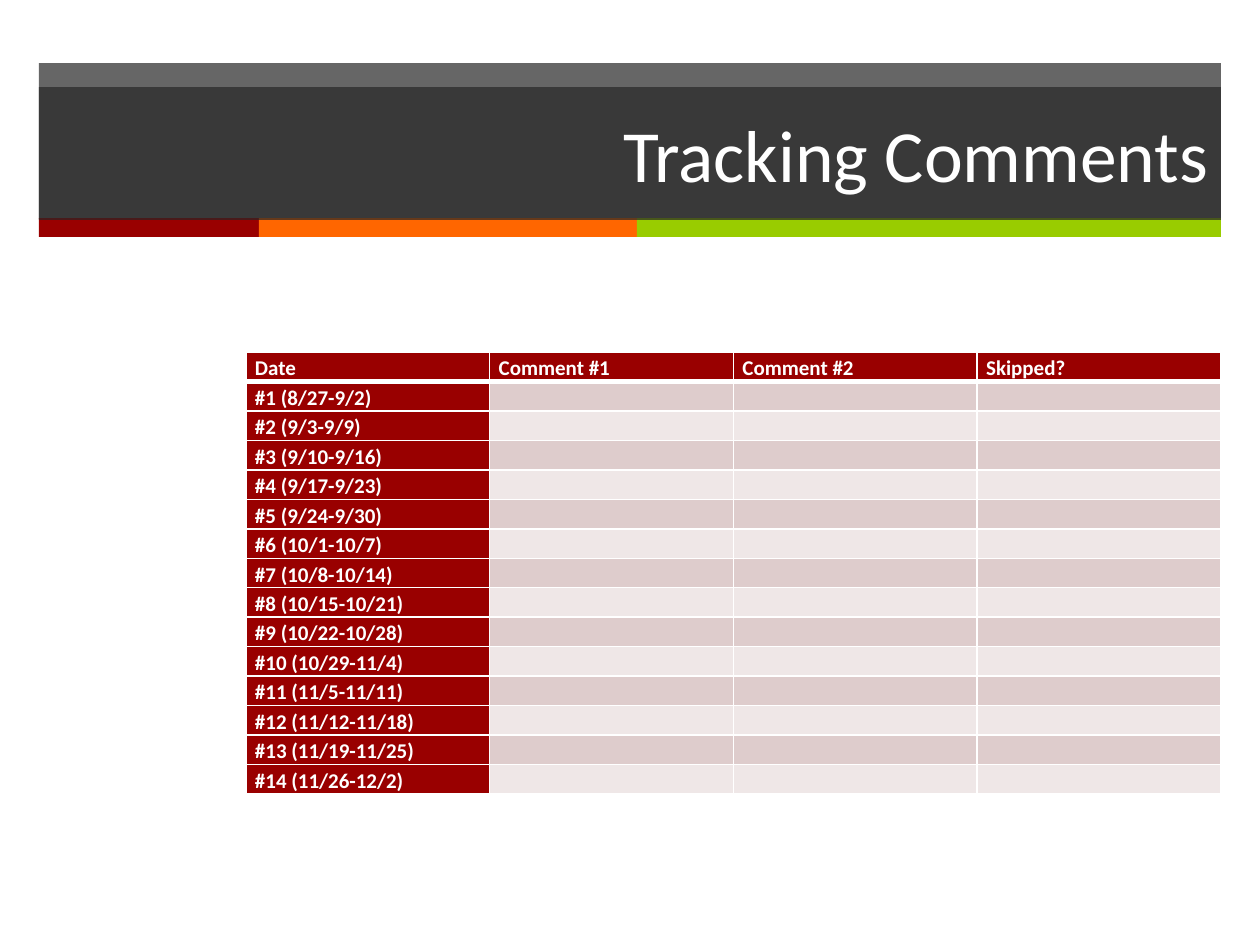
from lxml import etree
from pptx import Presentation
from pptx import util as u
from pptx.dml.color import RGBColor
from pptx.enum import shapes, text
from pptx.oxml.ns import qn

EMU_PER_PX = 914400 / 126
COLORS = {
    "white": "FFFFFF",
    "dark": "262626",
    "red": "990000",
    "orange": "FF6600",
    "green": "99CC00",
    "odd_row": "DECCCC",
    "even_row": "EFE7E7",
}
HEADERS = ["Date", "Comment #1", "Comment #2", "Skipped?"]
WEEKS = [
    "8/27-9/2", "9/3-9/9", "9/10-9/16", "9/17-9/23", "9/24-9/30",
    "10/1-10/7", "10/8-10/14", "10/15-10/21", "10/22-10/28", "10/29-11/4",
    "11/5-11/11", "11/12-11/18", "11/19-11/25", "11/26-12/2",
]


def px(length):
    return u.Emu(round(length * EMU_PER_PX))


def set_fill(target, color, alpha=None):
    target.fill.solid()
    target.fill.fore_color.rgb = RGBColor.from_string(COLORS[color])
    if alpha is not None:
        color_node = target.fill._xPr.find(f".//{qn('a:srgbClr')}")
        etree.SubElement(color_node, qn("a:alpha"), val=str(alpha * 1000))


def write_text(frame, content, size=12, color="white", bold=False,
               align=text.PP_ALIGN.LEFT, spacing=None):
    paragraph = frame.paragraphs[0]
    paragraph.alignment = align
    paragraph.line_spacing = spacing
    if not content:
        # The end mark keeps an empty row as low as a written one
        paragraph._p.get_or_add_endParaRPr().set("sz", str(size * 100))
        return
    run = paragraph.add_run()
    run.text = content
    run.font.name = "Calibri"
    run.font.size = u.Pt(size)
    run.font.bold = bold
    run.font.color.rgb = RGBColor.from_string(COLORS[color])


def add_bar(slide, left, top, width, height, color, alpha=None):
    bar = slide.shapes.add_shape(
        shapes.MSO_SHAPE.RECTANGLE, px(left), px(top), px(width), px(height))
    bar.shadow.inherit = False
    bar.line.fill.background()
    set_fill(bar, color, alpha)


def add_title_band(slide, left, top, width, height, content):
    # Dark band and the colour strip along its foot
    add_bar(slide, left, top, width, height - 18, "dark", 70)
    strip_left = left
    for color, strip_width in (("red", 220), ("orange", 378), ("green", width - 598)):
        add_bar(slide, strip_left, top + height - 19, strip_width, 19, color)
        strip_left += strip_width

    # Title, in front of the band
    title = slide.shapes.title
    title.left, title.top = px(left), px(top + 24)
    title.width, title.height = px(width), px(height - 41)
    set_fill(title, "dark", 70)
    title.text_frame.vertical_anchor = text.MSO_ANCHOR.MIDDLE
    write_text(title.text_frame, content, size=42, align=text.PP_ALIGN.RIGHT)
    slide.shapes._spTree.append(title._element)


def set_borders(cell, **widths):
    properties = cell._tc.get_or_add_tcPr()
    for side in ("L", "R", "T", "B"):
        line = etree.SubElement(properties, qn(f"a:ln{side}"),
                                w=str(u.Pt(widths.get(side, 1))))
        fill = etree.SubElement(line, qn("a:solidFill"))
        etree.SubElement(fill, qn("a:srgbClr"), val=COLORS["white"])


def add_comment_table(slide, left, top, width, height):
    rows = [HEADERS]
    rows += [[f"#{number} ({week})", "", "", ""]
             for number, week in enumerate(WEEKS, 1)]
    table = slide.shapes.add_table(
        len(rows), len(HEADERS), px(left), px(top), px(width), px(height)).table
    table.first_col = True
    for column in table.columns:
        column.width = px(width / len(HEADERS))

    for row_index, row in enumerate(rows):
        table.rows[row_index].height = px(height / len(rows))
        for column_index, content in enumerate(row):
            cell = table.cell(row_index, column_index)
            cell.margin_left = cell.margin_right = px(9)
            cell.margin_top = cell.margin_bottom = 0
            write_text(cell.text_frame, content, bold=True, spacing=1.15)
            # Thick rule under the header row
            set_borders(cell, B=3 if row_index == 0 else 1,
                        T=3 if row_index == 1 else 1)
            if row_index == 0 or column_index == 0:
                set_fill(cell, "red")
            else:
                set_fill(cell, "odd_row" if row_index % 2 else "even_row")


def main():
    presentation = Presentation()
    presentation.slide_width, presentation.slide_height = px(1260), px(945)
    slide = presentation.slides.add_slide(presentation.slide_layouts[5])
    add_title_band(slide, 39, 63, 1182, 174, "Tracking Comments")
    add_comment_table(slide, 246, 352, 975, 442)
    presentation.save("out.pptx")


if __name__ == "__main__":
    main()
